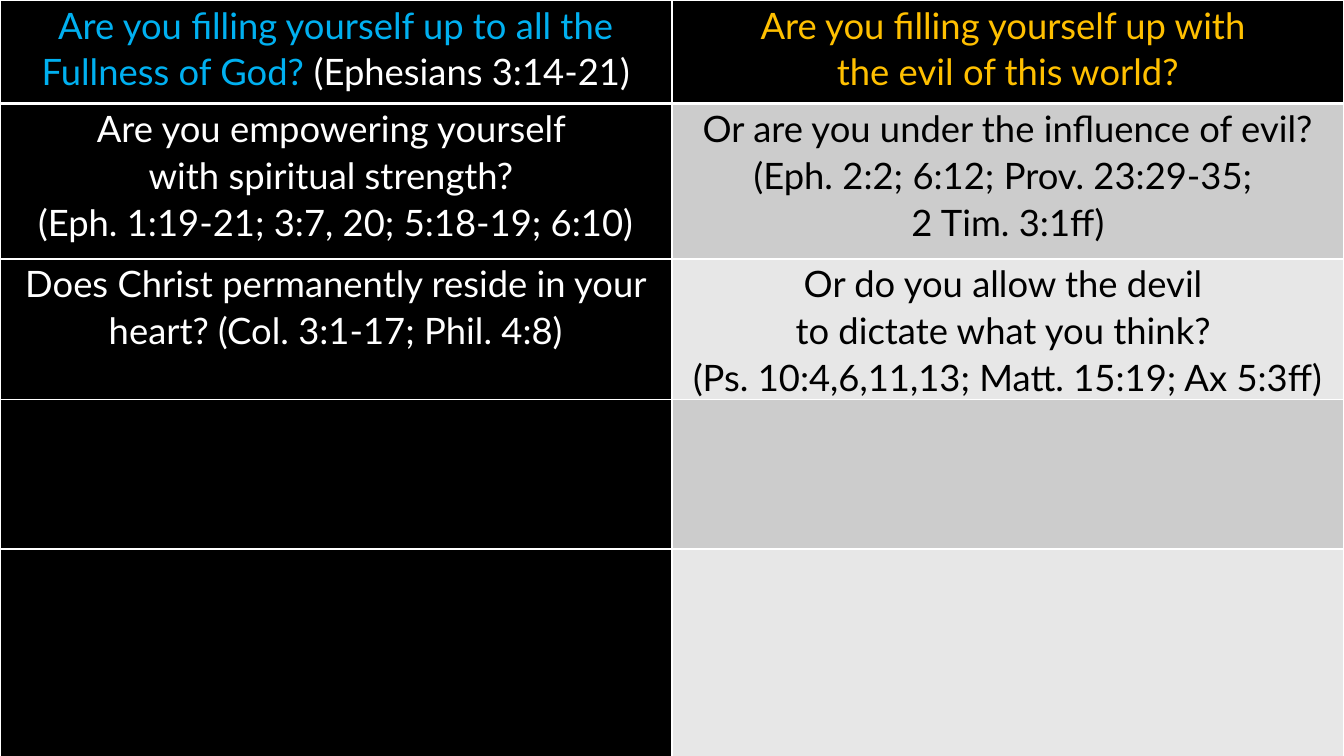
from lxml import etree
from pptx import Presentation
from pptx.dml.color import RGBColor
from pptx.enum.text import PP_ALIGN
from pptx.oxml.ns import qn
from pptx.util import Pt

CENTER = PP_ALIGN.CENTER
WIDE, HIGH = 960, 540
FONT, SIZE, SPACE = "Lato", 26, 1.07
HUES = {
    "black": "000000",
    "white": "FFFFFF",
    "blue": "00B0F0",
    "gold": "FFC000",
    "gray": "CCCCCC",
    "pale": "E7E7E7",
}
ROWS = [74, 111, 100, 107, 148]
CELLS = [
    [
        [[("Are you filling yourself up to all the Fullness of God? ", "blue"),
          ("(Ephesians 3:14-21)", "white")]],
        [[("Are you filling yourself up with ", "gold")],
         [("the evil of this world?", "gold")]],
    ],
    [
        [[("Are you empowering yourself ", "white")],
         [("with spiritual strength? ", "white")],
         [("(Eph. 1:19-21; 3:7, 20; 5:18-19; 6:10)", "white")]],
        [[("Or are you under the influence of evil? "
           "(Eph. 2:2; 6:12; Prov. 23:29-35; ", "black")],
         [("2 Tim. 3:1ff)", "black")]],
    ],
    [
        [[("Does Christ permanently reside in your heart? "
           "(Col. 3:1-17; Phil. 4:8)", "white")]],
        [[("Or do you allow the devil ", "black")],
         [("to dictate what you think? ", "black")],
         [("(Ps. 10:4,6,11,13; Matt. 15:19; Ax 5:3ff)", "black")]],
    ],
    [[], []],
    [[], []],
]


def tint(name):
    return RGBColor.from_string(HUES[name])


def edge(cell, side, width):
    props = cell._tc.get_or_add_tcPr()
    line = etree.SubElement(props, qn("a:ln" + side), w=str(Pt(width)))
    fill = etree.SubElement(line, qn("a:solidFill"))
    etree.SubElement(fill, qn("a:srgbClr"), val=HUES["white"])


def write(frame, lines):
    for n, line in enumerate(lines):
        para = frame.add_paragraph() if n else frame.paragraphs[0]
        para.alignment = CENTER
        para.line_spacing = SPACE
        for text, hue in line:
            run = para.add_run()
            run.text = text
            run.font.name = FONT
            run.font.size = Pt(SIZE)
            run.font.color.rgb = tint(hue)


def shade(row, col):
    if row == 0 or col == 0:
        return "black"
    return "gray" if row % 2 else "pale"


def grid(slide, left, top, width, height):
    cols = len(CELLS[0])
    frame = slide.shapes.add_table(
        len(ROWS), cols, Pt(left), Pt(top), Pt(width), Pt(height))
    table = frame.table
    for col in table.columns:
        col.width = Pt(width / cols)
    for r, tall in enumerate(ROWS):
        table.rows[r].height = Pt(height * tall / sum(ROWS))
        for c, lines in enumerate(CELLS[r]):
            cell = table.cell(r, c)
            cell.margin_left = cell.margin_right = Pt(5)
            cell.margin_top = cell.margin_bottom = 0
            for side in "LRTB":
                thick = (r, side) in ((0, "B"), (1, "T"))
                edge(cell, side, 3 if thick else 1)
            cell.fill.solid()
            cell.fill.fore_color.rgb = tint(shade(r, c))
            write(cell.text_frame, lines)


def main():
    deck = Presentation()
    deck.slide_width, deck.slide_height = Pt(WIDE), Pt(HIGH)
    slide = deck.slides.add_slide(deck.slide_layouts[6])
    back = slide.background.fill
    back.solid()
    back.fore_color.rgb = tint("black")
    grid(slide, 0, 0, WIDE, HIGH)
    deck.save("out.pptx")


if __name__ == "__main__":
    main()
